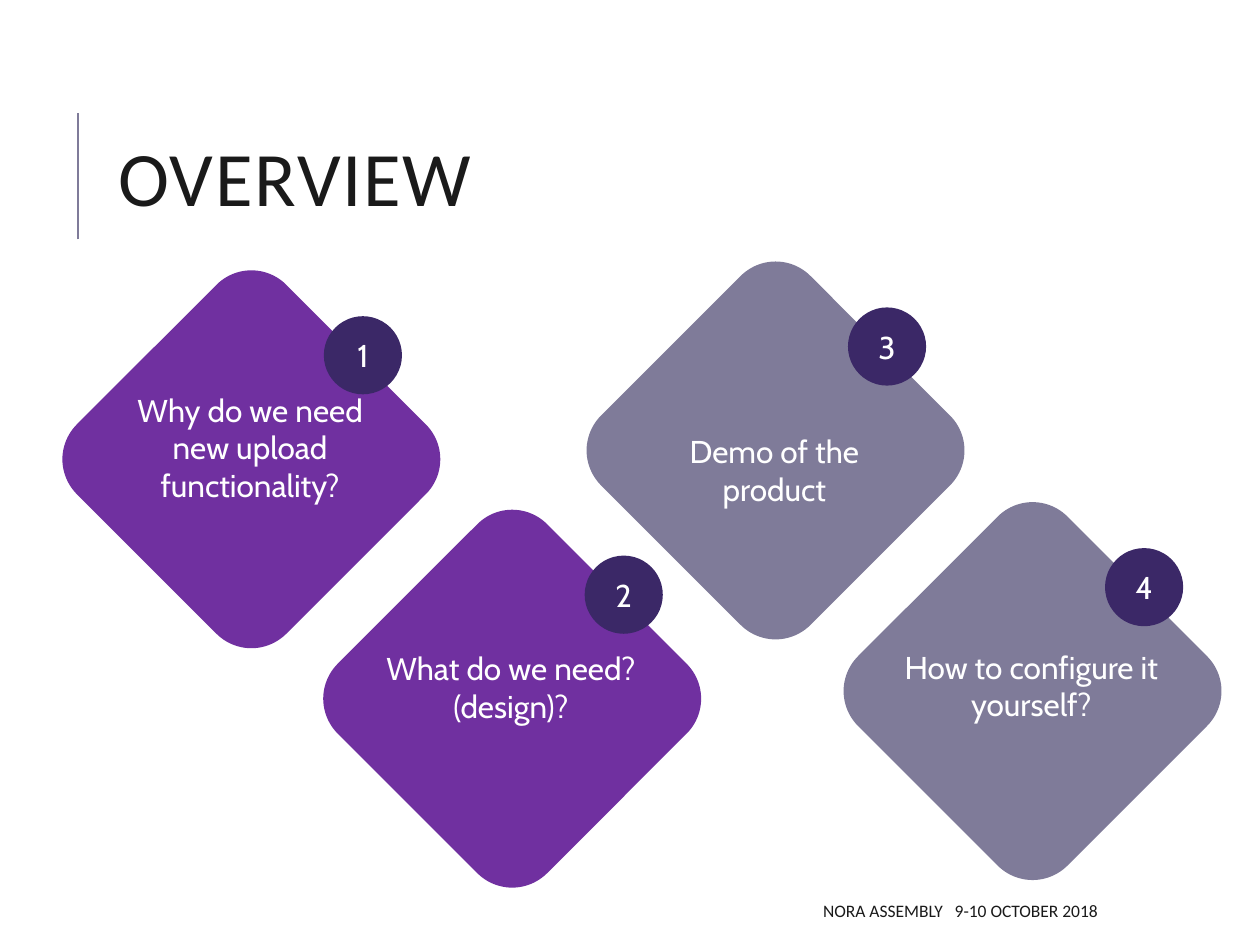
from dataclasses import dataclass

import pptx
import pptx.dml.color
import pptx.enum.shapes
import pptx.enum.text
import pptx.oxml.ns
import pptx.util
from lxml import etree

Inches = pptx.util.Inches
ALIGN = pptx.enum.text.PP_ALIGN
ANCHOR = pptx.enum.text.MSO_ANCHOR
SHAPE = pptx.enum.shapes.MSO_SHAPE


@dataclass(frozen=True)
class Theme:
    ink: str = "1A1A1A"
    white: str = "FFFFFF"
    purple: str = "7030A0"
    grey: str = "7F7B99"
    badge: str = "3B2867"
    heading: str = "Calibri"
    body: str = "Cabin"
    title_pt: int = 44
    label_pt: int = 18
    footer_pt: int = 10


@dataclass(frozen=True)
class Topic:
    text: str
    left: float
    top: float
    label_top: float
    label_height: float
    fill: str


THEME = Theme()
DIAMOND = 2.35
BADGE = 0.62
BADGE_DX, BADGE_DY = 1.75, 0.04
LABEL_DX, LABEL_WIDTH = 0.04, 2.25

TOPICS = [
    Topic("Why do we need new upload functionality?", 0.82, 2.47, 3.05, 1.01, THEME.purple),
    Topic("What do we need? (design)?", 2.89, 4.37, 5.1, 0.71, THEME.purple),
    Topic("Demo of the product", 4.98, 2.4, 3.38, 0.4, THEME.grey),
    Topic("How to configure it yourself?", 7.02, 4.31, 5.09, 0.71, THEME.grey),
]


def rgb(color: str) -> pptx.dml.color.RGBColor:
    return pptx.dml.color.RGBColor.from_string(color)


def add_run(p, text: str, size: int, font: str, color: str, spacing: float = 0) -> None:
    """Append a run; spacing is extra letter spacing in points."""
    r = p.add_run()
    r.text = text
    for name, value in {"size": pptx.util.Pt(size), "name": font}.items():
        setattr(r.font, name, value)
    r.font.color.rgb = rgb(color)
    if spacing:
        r._r.get_or_add_rPr().set("spc", str(round(spacing * 100)))


def add_text_box(s, left: float, top: float, width: float, height: float,
                 align, anchor):
    """Add a wrapping text box and return its first paragraph."""
    sp = s.shapes.add_textbox(*map(Inches, (left, top, width, height)))
    tf = sp.text_frame
    for name, value in {"word_wrap": True, "vertical_anchor": anchor}.items():
        setattr(tf, name, value)
    p = tf.paragraphs[0]
    p.alignment = align
    return p


def add_solid(s, kind, left: float, top: float, size: float, fill: str):
    """Add a square-bounded shape with a plain fill and no outline."""
    sp = s.shapes.add_shape(kind, *map(Inches, (left, top, size, size)))
    sp.shadow.inherit = False
    sp.fill.solid()
    sp.fill.fore_color.rgb = rgb(fill)
    sp.line.fill.background()
    return sp


def add_topic(s, number: int, topic: Topic) -> None:
    diamond = add_solid(s, SHAPE.ROUNDED_RECTANGLE, topic.left, topic.top, DIAMOND, topic.fill)
    diamond.rotation = 45

    badge = add_solid(s, SHAPE.OVAL, topic.left + BADGE_DX, topic.top + BADGE_DY,
                      BADGE, THEME.badge)
    tf = badge.text_frame
    tf.vertical_anchor = ANCHOR.MIDDLE
    p = tf.paragraphs[0]
    p.alignment = ALIGN.CENTER
    add_run(p, str(number), THEME.label_pt, THEME.body, THEME.white)

    p = add_text_box(s, topic.left + LABEL_DX, topic.label_top, LABEL_WIDTH,
                     topic.label_height, ALIGN.CENTER, ANCHOR.TOP)
    add_run(p, topic.text, THEME.label_pt, THEME.body, THEME.white)


def add_title(s) -> None:
    rule = s.shapes.add_connector(pptx.enum.shapes.MSO_CONNECTOR.STRAIGHT,
                                  *map(Inches, (0.62, 1.9, 0.62, 0.9)))
    rule.line.color.rgb = rgb(THEME.grey)
    rule.line.width = pptx.util.Pt(1.5)
    etree.SubElement(rule._element.spPr, pptx.oxml.ns.qn("a:effectLst"))

    p = add_text_box(s, 0.84, 0.64, 7.97, 1.64, ALIGN.LEFT, ANCHOR.MIDDLE)
    p.line_spacing = 0.8
    add_run(p, "OVERVIEW", THEME.title_pt, THEME.heading, THEME.ink, spacing=1)


def add_footer(s) -> None:
    p = add_text_box(s, 3.97, 7.08, 4.84, 0.3, ALIGN.RIGHT, ANCHOR.MIDDLE)
    for text, spacing in (("NORA ASSEMBLY", 0), (" ", 4.5), ("9-10 OCTOBER 2018", 0)):
        add_run(p, text, THEME.footer_pt, THEME.heading, THEME.ink, spacing)


def main() -> None:
    prs = pptx.Presentation()
    prs.slide_width, prs.slide_height = Inches(10), Inches(7.5)
    s = prs.slides.add_slide(prs.slide_layouts[6])
    add_title(s)
    for number, topic in enumerate(TOPICS, start=1):
        add_topic(s, number, topic)
    add_footer(s)
    prs.save("out.pptx")


if __name__ == "__main__":
    main()
